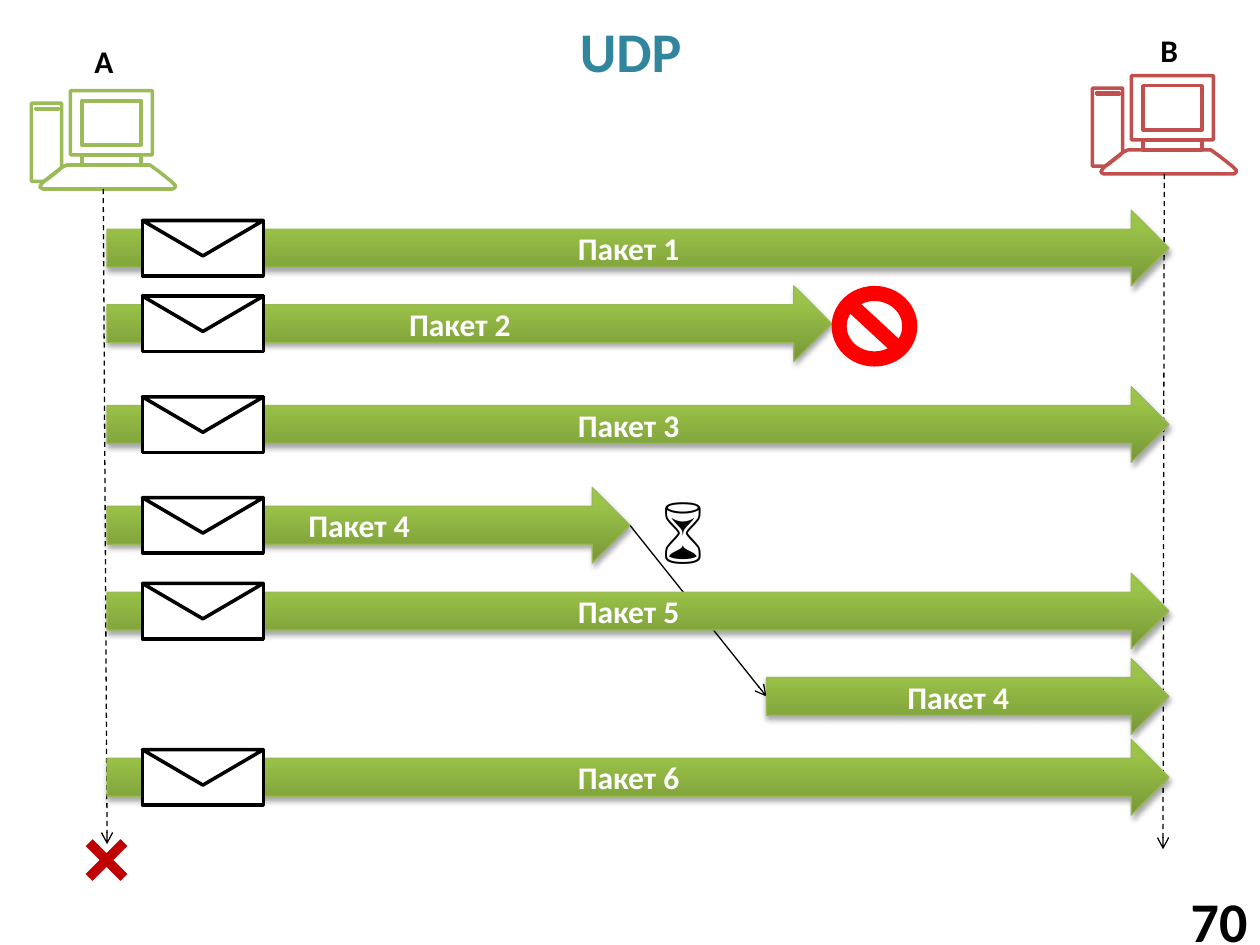
"""Build the UDP slide: packets sent from A to B, one lost and one delayed."""
from copy import deepcopy

from lxml.etree import SubElement
from pptx import Presentation
from pptx.dml.color import RGBColor
from pptx.enum.dml import MSO_LINE
from pptx.enum.shapes import MSO_CONNECTOR, MSO_SHAPE
from pptx.enum.text import MSO_ANCHOR, MSO_AUTO_SIZE, PP_ALIGN
from pptx.oxml.ns import qn
from pptx.util import Pt

COLORS = {
    "title": "31859C", "black": "000000", "white": "FFFFFF",
    "host_a": "9BBB59", "host_b": "C0504D", "edge": "98B955",
    "stop": "FF0000", "cross": "C00000",
}
GRADIENT = [(0, "779737"), (0.8, "9BC348"), (1, "9DC746")]
FONT = "Calibri"

A_X, B_X = 61.2, 668
LOST_X, DELAY_X, RESUME_X = 475.2, 360, 438
ARROW_HEIGHT = 43.2
# label, left, right, top, carries an envelope
PACKETS = [
    ("Пакет 1", A_X, B_X, 120.2, True),
    ("Пакет 2", A_X, LOST_X, 163.4, True),
    ("Пакет 3", A_X, B_X, 221, True),
    ("Пакет 4", A_X, DELAY_X, 278.6, True),
    ("Пакет 5", A_X, B_X, 327.6, True),
    ("Пакет 4", RESUME_X, B_X, 376.4, False),
    ("Пакет 6", A_X, B_X, 422.6, True),
]
# text, left, top, width, height, size, bold
LABELS = [
    ("A", 46.8, 20.2, 25.2, 29, 18, True),
    ("B", 656, 14.4, 25.2, 29, 18, True),
    ("⌛", 371.5, 275.8, 36.7, 51, 36, False),
]
HOSTS = [(18, 51.8, "host_a"), (624.3, 43.2, "host_b")]
TIMELINES = [((59, 108), (61.2, 482.4)), ((665.3, 99.4), (664.6, 485.3))]

CASE = [
    (17.3, 43.9), (20.2, 42.5), (28.8, 42.5), (28.8, 36.7), (22.3, 36.7),
    (22.3, 0), (69.1, 0), (69.1, 36.7), (62.6, 36.7), (62.6, 42.5),
    (67.7, 42.5), (72.7, 46.1), (79.9, 51.8), (81.4, 53.3), (82.1, 54),
    (82.1, 55.4), (80.6, 56.2), (6.5, 56.2), (5, 55.4), (5, 54.7),
    (5.8, 53.3), (7.2, 51.8), (0, 51.8), (0, 7.2), (17.3, 7.2),
]
KEYBOARD_EDGE = [(17.3, 43.9), (15.8, 45.4), (9.4, 50.4), (7.2, 51.8)]


def rectangle(left, top, right, bottom):
    return [(left, top), (right, top), (right, bottom), (left, bottom)]


COMPUTER = [
    CASE, KEYBOARD_EDGE, rectangle(28.8, 5.8, 62.6, 31),
    rectangle(2.2, 10.1, 15.1, 10.8), rectangle(28.8, 36.7, 62.6, 42.5),
]


def rgb(name):
    return RGBColor.from_string(COLORS.get(name, name))


def add_text(frame, text, size, color, align, bold=True):
    para = frame.paragraphs[0]
    para.alignment = align
    span = para.add_run()
    span.text = text
    span.font.name = FONT
    span.font.size = Pt(size)
    span.font.bold = bold
    span.font.color.rgb = rgb(color)


def paint(shape, fill, line=None, width=2):
    shape.shadow.inherit = False
    shape.fill.solid()
    shape.fill.fore_color.rgb = rgb(fill)
    if line:
        shape.line.color.rgb = rgb(line)
        shape.line.width = Pt(width)
    else:
        shape.line.fill.background()


def add_shape(shapes, kind, left, top, width, height):
    return shapes.add_shape(kind, Pt(left), Pt(top), Pt(width), Pt(height))


def add_box(shapes, left, top, width, height):
    return shapes.add_textbox(Pt(left), Pt(top), Pt(width), Pt(height))


def add_line(shapes, start, end, dashed=False):
    line = shapes.add_connector(MSO_CONNECTOR.STRAIGHT, *map(Pt, start + end))
    line.line.color.rgb = rgb("black")
    line.line.width = Pt(0.75)
    if dashed:
        line.line.dash_style = MSO_LINE.DASH
    SubElement(line.line._get_or_add_ln(), qn("a:tailEnd"), type="arrow")
    SubElement(line._element.spPr, qn("a:effectLst"))


def add_computer(shapes, left, top, color):
    builder = None
    for outline in COMPUTER:
        first, *rest = [(Pt(x), Pt(y)) for x, y in outline]
        if builder is None:
            builder = shapes.build_freeform(*first, scale=1.0)
        else:
            builder.move_to(*first)
        builder.add_line_segments(rest, close=True)
    paint(builder.convert_to_shape(Pt(left), Pt(top)), "white", color)


def add_envelope(shapes, top):
    group = shapes.add_group_shape()
    back = add_shape(group.shapes, MSO_SHAPE.RECTANGLE, 81.4, top, 69.1, 31.7)
    flap = add_shape(group.shapes, MSO_SHAPE.ISOSCELES_TRIANGLE, 81.4, top, 69.1, 20.2)
    flap.rotation = 180
    for part in (back, flap):
        paint(part, "white", "black")


def add_packet(shapes, label, left, right, top, has_envelope):
    arrow = add_shape(shapes, MSO_SHAPE.RIGHT_ARROW, left, top, right - left, ARROW_HEIGHT)
    paint(arrow, "white", "edge", 0.75)
    arrow.fill.gradient()
    arrow.fill.gradient_angle = 90
    stop_list = arrow._element.spPr.find(".//" + qn("a:gsLst"))
    stop_list.append(deepcopy(stop_list[-1]))
    for stop, (position, color) in zip(arrow.fill.gradient_stops, GRADIENT):
        stop.position = position
        stop.color.rgb = rgb(color)
    effects = arrow._element.spPr.find(qn("a:effectLst"))
    shadow = SubElement(effects, qn("a:outerShdw"), blurRad=str(Pt(3.1)),
                        dist=str(Pt(1.8)), dir="5400000", rotWithShape="0")
    shade = SubElement(shadow, qn("a:srgbClr"), val=COLORS["black"])
    SubElement(shade, qn("a:alpha"), val="35000")
    arrow.text_frame.vertical_anchor = MSO_ANCHOR.MIDDLE
    add_text(arrow.text_frame, label, 18, "white", PP_ALIGN.CENTER)
    if has_envelope:
        add_envelope(shapes, top + 5.8)


def main():
    deck = Presentation()
    deck.slide_width, deck.slide_height = Pt(720), Pt(540)
    page = deck.slides.add_slide(deck.slide_layouts[5])
    shapes = page.shapes

    title = shapes.title
    title.left, title.top, title.width, title.height = map(Pt, (20.2, 3.6, 680.4, 49.7))
    title.text_frame.vertical_anchor = MSO_ANCHOR.MIDDLE
    add_text(title.text_frame, "UDP", 32, "title", PP_ALIGN.CENTER)

    number = add_box(shapes, 637.9, 511.2, 82.1, 28.8)
    number.text_frame.word_wrap = True
    number.text_frame.vertical_anchor = MSO_ANCHOR.MIDDLE
    add_text(number.text_frame, "70", 32, "black", PP_ALIGN.RIGHT)

    add_line(shapes, (DELAY_X, 300.2), (RESUME_X, 398))
    for host in HOSTS:
        add_computer(shapes, *host)
    for start, end in TIMELINES:
        add_line(shapes, start, end, dashed=True)
    for packet in PACKETS:
        add_packet(shapes, *packet)

    cross = add_shape(shapes, MSO_SHAPE.CROSS, 46.8, 477.4, 28.1, 28.1)
    cross.adjustments[0] = 0.4
    cross.rotation = 45
    paint(cross, "cross")
    paint(add_shape(shapes, MSO_SHAPE.NO_SYMBOL, LOST_X, 163.4, 49, 46.1), "stop")

    for text, left, top, width, height, size, bold in LABELS:
        box = add_box(shapes, left, top, width, height)
        box.text_frame.word_wrap = False
        box.text_frame.auto_size = MSO_AUTO_SIZE.SHAPE_TO_FIT_TEXT
        add_text(box.text_frame, text, size, "black", PP_ALIGN.LEFT, bold)

    deck.save("out.pptx")


if __name__ == "__main__":
    main()
